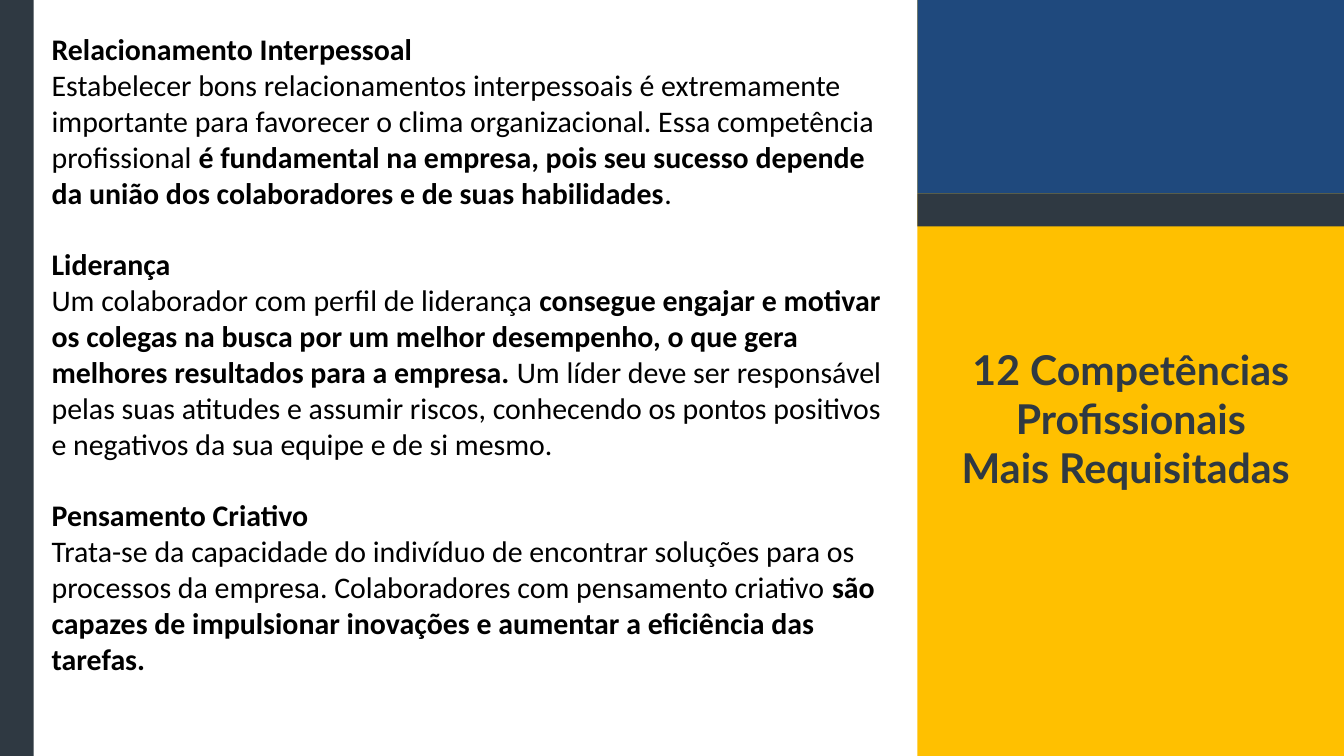
from pptx import Presentation
from pptx.dml.color import RGBColor
from pptx.enum.shapes import MSO_SHAPE as Shape
from pptx.enum.text import MSO_AUTO_SIZE as AutoSize, PP_ALIGN as Align
from pptx.util import Pt

COLORS = {"slate": "2F3942", "gold": "FFC000", "navy": "1F497D", "black": "000000"}
WIDTH, HEIGHT = 1440, 810
PANEL_LEFT, PANEL_TOP = 982.8, -2.2
PANEL_WIDTH = WIDTH - PANEL_LEFT
STRIPE_TOP, STRIPE_HEIGHT = 207.4, 35.3

BODY_FONT = {"name": "Calibri", "size": Pt(32)}
TITLE_FONT = {"name": "Lato", "size": Pt(44), "bold": True}
SECTION_GAP = 38.4  # one body line

# Heading, then (text, bold) pieces of its description
SKILLS = [
    ("Relacionamento Interpessoal", [
        ("Estabelecer bons relacionamentos interpessoais é extremamente importante "
         "para favorecer o clima organizacional. Essa competência profissional ", False),
        ("é fundamental na empresa, pois seu sucesso depende da união dos "
         "colaboradores e de suas habilidades", True),
        (".", False)]),
    ("Liderança", [
        ("Um colaborador com perfil de liderança ", False),
        ("consegue engajar e motivar os colegas na busca por um melhor desempenho, "
         "o que gera melhores resultados para a empresa. ", True),
        ("Um líder deve ser responsável pelas suas atitudes e assumir riscos, "
         "conhecendo os pontos positivos e negativos da sua equipe e de si mesmo.", False)]),
    ("Pensamento Criativo", [
        ("Trata-se da capacidade do indivíduo de encontrar soluções para os processos "
         "da empresa. Colaboradores com pensamento criativo ", False),
        ("são capazes de impulsionar inovações e aumentar a eficiência das tarefas.", True)]),
]
TITLE_LINES = ["12 Competências", "Profissionais", "Mais Requisitadas "]


def add_block(slide, left, top, width, height, color):
    block = slide.shapes.add_shape(Shape.RECTANGLE, Pt(left), Pt(top), Pt(width), Pt(height))
    block.shadow.inherit = False
    block.fill.solid()
    block.fill.fore_color.rgb = RGBColor.from_string(COLORS[color])
    block.line.fill.background()


def add_text_frame(slide, left, top, width, height, wrap):
    frame = slide.shapes.add_textbox(Pt(left), Pt(top), Pt(width), Pt(height)).text_frame
    frame.word_wrap = wrap
    frame.auto_size = AutoSize.SHAPE_TO_FIT_TEXT
    return frame


def add_paragraph(frame, pieces, font, color, **layout):
    first = frame.paragraphs[0]
    paragraph = frame.add_paragraph() if first.runs else first
    for key, value in layout.items():
        setattr(paragraph, key, value)
    for text, bold in pieces:
        run = paragraph.add_run()
        run.text = text
        for key, value in {**font, "bold": bold}.items():
            setattr(run.font, key, value)
        run.font.color.rgb = RGBColor.from_string(COLORS[color])


def add_skills(slide):
    frame = add_text_frame(slide, 48.2, 29.5, 922.3, 704.9, True)
    for index, (heading, description) in enumerate(SKILLS):
        gap = Pt(SECTION_GAP if index else 0)
        add_paragraph(frame, [(heading, True)], BODY_FONT, "black", space_before=gap)
        add_paragraph(frame, description, BODY_FONT, "black")


def add_title(slide):
    frame = add_text_frame(slide, 1004.4, 365, 414.7, 167, False)
    for line in TITLE_LINES:
        add_paragraph(frame, [(line, True)], TITLE_FONT, "slate", alignment=Align.CENTER)


def main():
    deck = Presentation()
    deck.slide_width, deck.slide_height = Pt(WIDTH), Pt(HEIGHT)
    slide = deck.slides.add_slide(deck.slide_layouts[6])

    # Left edge and side panel
    add_block(slide, -0.7, 0, 36.7, HEIGHT, "slate")
    add_block(slide, PANEL_LEFT, PANEL_TOP, PANEL_WIDTH, HEIGHT - PANEL_TOP, "gold")

    # Skills
    add_skills(slide)

    # Panel header, title and dividing stripe
    add_block(slide, PANEL_LEFT, PANEL_TOP, PANEL_WIDTH, STRIPE_TOP - PANEL_TOP, "navy")
    add_title(slide)
    add_block(slide, PANEL_LEFT, STRIPE_TOP, PANEL_WIDTH, STRIPE_HEIGHT, "slate")

    deck.save("out.pptx")


if __name__ == "__main__":
    main()
